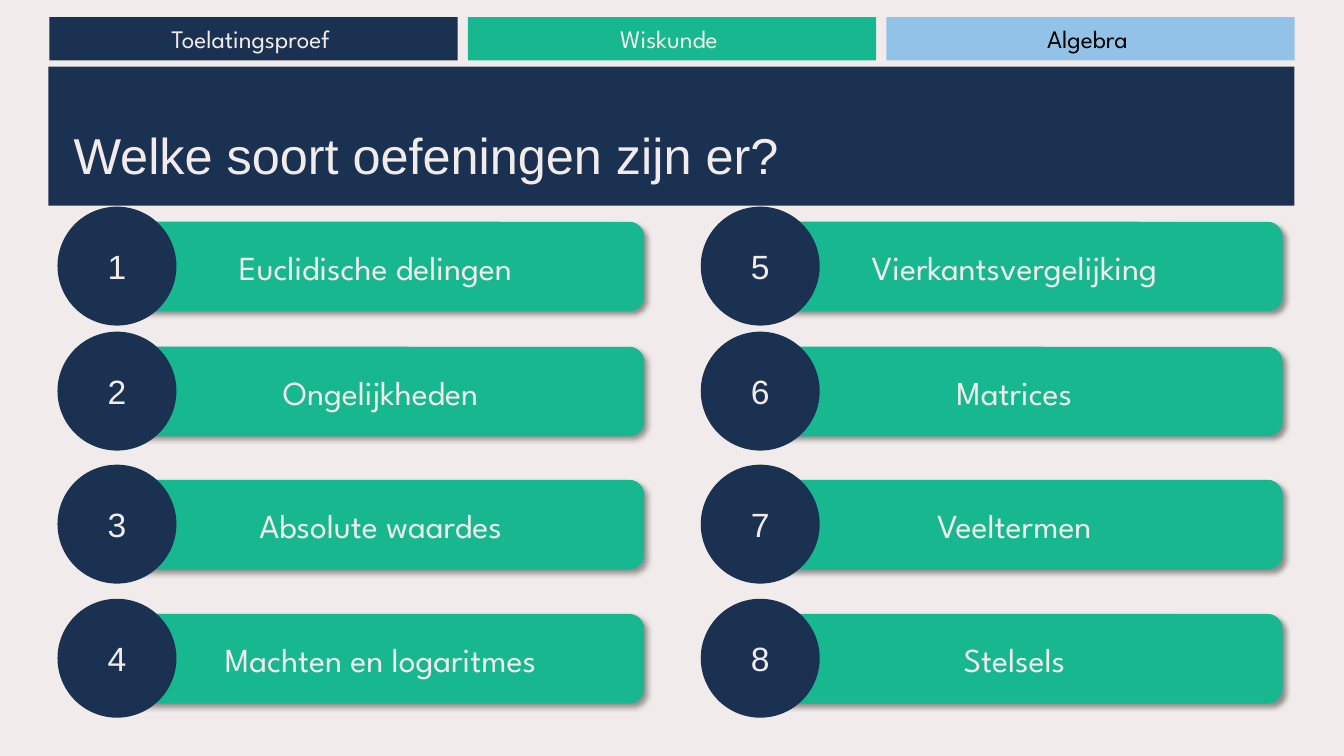
from lxml.etree import SubElement
from pptx import Presentation
from pptx.dml.color import RGBColor
from pptx.enum.shapes import MSO_SHAPE as Form
from pptx.enum.text import MSO_ANCHOR as Anchor, PP_ALIGN as Align
from pptx.oxml.ns import qn
from pptx.util import Inches, Pt

NAVY = RGBColor(0x1B, 0x31, 0x51)
GREEN = RGBColor(0x17, 0xB7, 0x90)
SKY = RGBColor(0x93, 0xC2, 0xE8)
LIGHT = RGBColor(0xF1, 0xEC, 0xEB)
BLACK = RGBColor(0, 0, 0)
SANS, ROUND = "Arial", "League Spartan"

TABS = [("Toelatingsproef ", NAVY, LIGHT),
        ("Wiskunde ", GREEN, LIGHT),
        ("Algebra ", SKY, BLACK)]
TOPICS = ["Euclidische delingen", "Ongelijkheden", "Absolute waardes",
          "Machten en logaritmes", "Vierkantsvergelijking", "Matrices",
          "Veeltermen", "Stelsels"]
ROWS = [2.2, 3.44, 4.76, 6.09]


class Deck:
    def __init__(self):
        self.prs = Presentation()
        self.prs.slide_width = Inches(13.33)
        self.prs.slide_height = Inches(7.5)
        self.slide = self.prs.slides.add_slide(self.prs.slide_layouts[5])
        back = self.slide.background.fill
        back.solid()
        back.fore_color.rgb = LIGHT

    def label(self, shape, text, size, font, color, align, anchor):
        frame = shape.text_frame
        frame.text = text
        frame.word_wrap = True
        frame.vertical_anchor = anchor
        para = frame.paragraphs[0]
        para.alignment = align
        style = para.runs[0].font
        style.size, style.name = Pt(size), font
        style.color.rgb = color

    def block(self, form, box, fill, text="", size=24, font=ROUND, color=LIGHT):
        shape = self.slide.shapes.add_shape(form, *map(Inches, box))
        shape.fill.solid()
        shape.fill.fore_color.rgb = fill
        shape.line.fill.background()
        shape.shadow.inherit = False
        if text:
            self.label(shape, text, size, font, color, Align.CENTER, Anchor.MIDDLE)
        return shape

    def bar(self, box, text):
        shape = self.block(Form.ROUNDED_RECTANGLE, box, GREEN, text)
        # Soft shadow to the lower right
        effects = shape._element.spPr.find(qn("a:effectLst"))
        shadow = SubElement(effects, qn("a:outerShdw"), blurRad=str(Pt(4)),
                            dist=str(Pt(3)), dir="2700000", algn="tl",
                            rotWithShape="0")
        tint = SubElement(shadow, qn("a:srgbClr"), val=str(BLACK))
        SubElement(tint, qn("a:alpha"), val="40000")

    def title(self, box, text):
        title = self.slide.shapes.title
        title.left, title.top, title.width, title.height = map(Inches, box)
        self.label(title, text, 36, SANS, LIGHT, Align.LEFT, Anchor.BOTTOM)
        # Bring the title in front of its band
        self.slide.shapes._spTree.append(title._element)


def main():
    deck = Deck()

    # Tabs
    for i, (text, fill, color) in enumerate(TABS):
        deck.block(Form.RECTANGLE, (0.49 + 4.15 * i, 0.17, 4.05, 0.43),
                   fill, text, 18, color=color)

    # Title band
    deck.block(Form.RECTANGLE, (0.48, 0.66, 12.36, 1.38), NAVY)
    deck.title((0.63, 0.8, 12.06, 1.08), "Welke soort oefeningen zijn er?")

    # Numbered topics in two columns
    for i, topic in enumerate(TOPICS):
        col, row = divmod(i, len(ROWS))
        top = ROWS[row]
        left, right = (7.4, 12.72) if col else (1.16 if row else 1.06, 6.39)
        deck.bar((left, top, right - left, 0.89), topic)
        deck.block(Form.OVAL, (0.57 + 6.38 * col, top - 0.15, 1.18, 1.18),
                   NAVY, str(i + 1), font=SANS)

    deck.prs.save("out.pptx")


if __name__ == "__main__":
    main()
